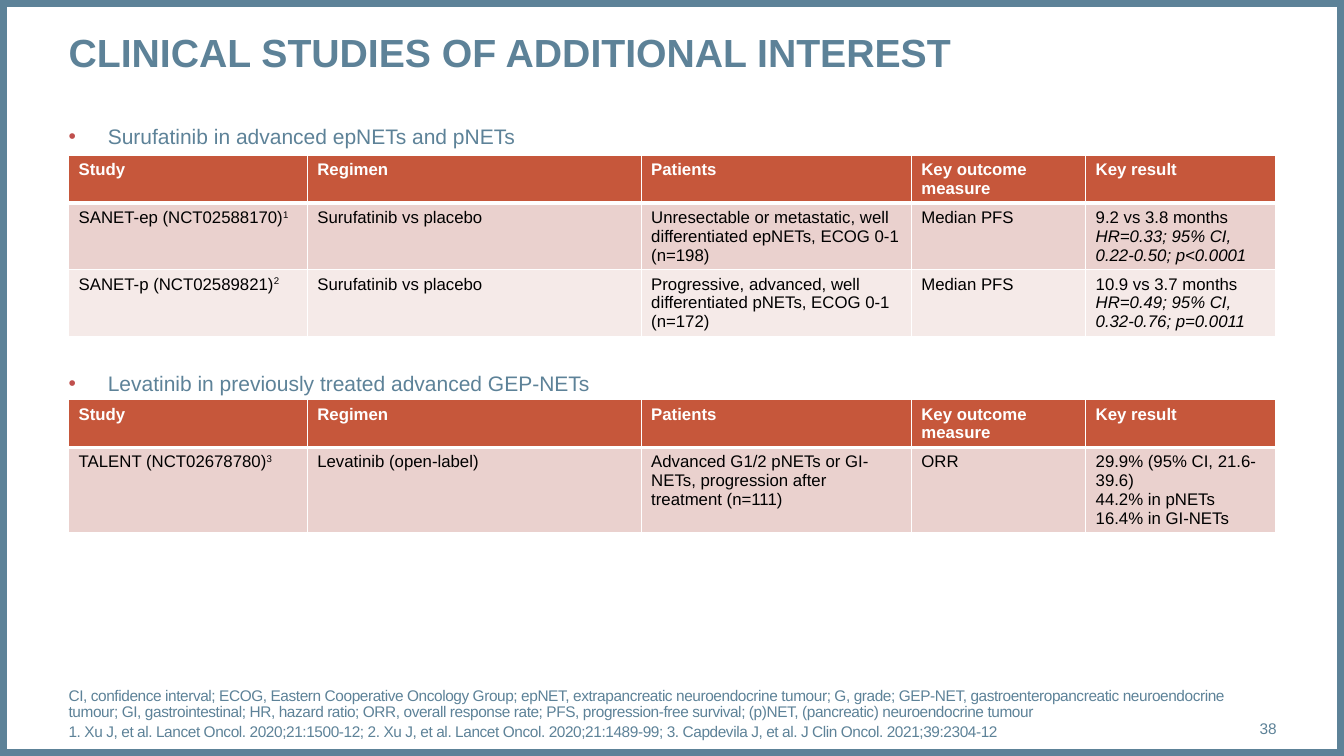
import pptx
import pptx.util
import pptx.dml.color
import pptx.enum.shapes
import pptx.enum.text
import pptx.oxml.ns
from lxml import etree

Pt = pptx.util.Pt
RGB = pptx.dml.color.RGBColor.from_string
ALIGN = pptx.enum.text.PP_ALIGN
ANCHOR = pptx.enum.text.MSO_ANCHOR
qn = pptx.oxml.ns.qn

THEME = {
    "font": "Arial", "slate": "5D8298", "bullet": "C0504D",
    "header": "C6573B", "bands": ["EAD1CE", "F5EAE8"],
    "white": "FFFFFF", "black": "000000",
    "title": 28, "heading": 15, "cell": 12, "small": 11,
}
LEFT, WIDTH = 49, 863


def place(shape, top, height, anchor, left=LEFT, width=WIDTH):
    """Position a text shape and strip its insets."""
    shape.left, shape.top, shape.width, shape.height = Pt(left), Pt(top), Pt(width), Pt(height)
    frame = shape.text_frame
    frame.margin_left = frame.margin_right = frame.margin_top = frame.margin_bottom = 0
    frame.word_wrap = True
    frame.auto_size = pptx.enum.text.MSO_AUTO_SIZE.NONE
    frame.vertical_anchor = anchor
    return frame


def style(para, size, color, bold=False):
    """Give every run of a paragraph the same look."""
    for span in para.runs:
        span.font.name = THEME["font"]
        span.font.size = Pt(size)
        span.font.color.rgb = RGB(color)
        span.font.bold = bold


deck = pptx.Presentation()
deck.slide_width, deck.slide_height = Pt(960), Pt(540)
page = deck.slides.add_slide(deck.slide_layouts[3])
title, *headings = page.placeholders

# Page border
border = page.shapes.add_shape(pptx.enum.shapes.MSO_SHAPE.RECTANGLE, 0, 0, Pt(960), Pt(540))
border.shadow.inherit = False
border.fill.background()
border.line.color.rgb = RGB(THEME["slate"])
border.line.width = Pt(10)
page.shapes._spTree.insert(2, border._element)

# Title
frame = place(title, 20, 68, ANCHOR.TOP)
frame.text = "CLINICAL STUDIES OF ADDITIONAL INTEREST"
frame.paragraphs[0].alignment = ALIGN.LEFT
style(frame.paragraphs[0], THEME["title"], THEME["slate"], bold=True)

# Table content: a cell is a list of paragraphs, a paragraph a list of (text, look) runs
COLUMNS = {"Study": 170.5, "Regimen": 238.5, "Patients": 193,
           "Key outcome measure": 124.5, "Key result": 136}
SECTIONS = [
    ("Surufatinib in advanced epNETs and pNETs", 88.5, 111, [34, 47.5, 47.5], [
        [[[("SANET-ep (NCT02588170)", ""), ("1", "super")]],
         [[("Surufatinib vs placebo", "")]],
         [[("Unresectable or metastatic, well differentiated epNETs, ECOG 0-1 (n=198)", "")]],
         [[("Median PFS", "")]],
         [[("9.2 vs 3.8 months ", ""), ("HR=0.33; 95% CI, 0.22-0.50; p<0.0001", "italic")]]],
        [[[("SANET-p (NCT02589821)", ""), ("2", "super")]],
         [[("Surufatinib vs placebo", "")]],
         [[("Progressive, advanced, well differentiated pNETs, ECOG 0-1 (n=172)", "")]],
         [[("Median PFS", "")]],
         [[("10.9 vs 3.7 months ", ""), ("HR=0.49; 95% CI, 0.32-0.76; p=0.0011", "italic")]]],
    ]),
    ("Levatinib in previously treated advanced GEP-NETs", 264.5, 285.5, [33, 61], [
        [[[("TALENT (NCT02678780)", ""), ("3", "super")]],
         [[("Levatinib (open-label)", "")]],
         [[("Advanced G1/2 pNETs or GI-NETs, progression after treatment (n=111)", "")]],
         [[("ORR", "")]],
         [[("29.9% (95% CI, 21.6-39.6)", "")], [("44.2% in pNETs", "")],
          [("16.4% in GI-NETs", "")]]],
    ]),
]
header = [[[(name, "")]] for name in COLUMNS]

for box, (heading, heading_top, table_top, heights, studies) in zip(headings, SECTIONS):
    # Bulleted heading
    frame = place(box, heading_top, 15, ANCHOR.TOP)
    frame.text = heading
    para = frame.paragraphs[0]
    para.space_before = Pt(0)
    props = para._p.get_or_add_pPr()
    props.set("marL", str(Pt(28)))
    props.set("indent", str(-Pt(28)))
    bullet_color = etree.SubElement(props, qn("a:buClr"))
    etree.SubElement(bullet_color, qn("a:srgbClr"), val=THEME["bullet"])
    etree.SubElement(props, qn("a:buFont"), typeface=THEME["font"])
    etree.SubElement(props, qn("a:buChar"), char="•")
    style(para, THEME["heading"], THEME["slate"])

    # Study table
    rows = [header] + studies
    table = page.shapes.add_table(len(rows), len(COLUMNS), Pt(LEFT), Pt(table_top),
                                  Pt(WIDTH), Pt(sum(heights))).table
    table.horz_banding = False
    for column, width in zip(table.columns, COLUMNS.values()):
        column.width = Pt(width)
    for i, (row, height) in enumerate(zip(rows, heights)):
        table.rows[i].height = Pt(height)
        for j, content in enumerate(row):
            cell = table.cell(i, j)
            cell.fill.solid()
            cell.fill.fore_color.rgb = RGB(THEME["bands"][i - 1] if i else THEME["header"])

            # White rules, thicker under the header
            for k, side in enumerate(["lnL", "lnR", "lnT", "lnB"]):
                thick = (i, side) in [(0, "lnB"), (1, "lnT")]
                rule = etree.Element(qn("a:" + side), w=str(Pt(3 if thick else 1)))
                fill = etree.SubElement(rule, qn("a:solidFill"))
                etree.SubElement(fill, qn("a:srgbClr"), val=THEME["white"])
                cell._tc.get_or_add_tcPr().insert(k, rule)

            # Cell text
            for n, spans in enumerate(content):
                para = cell.text_frame.add_paragraph() if n else cell.text_frame.paragraphs[0]
                for text, look in spans:
                    span = para.add_run()
                    span.text = text
                    span.font.italic = look == "italic"
                    if look == "super":
                        span.font._element.set("baseline", "30000")
                style(para, THEME["cell"], THEME["black" if i else "white"], bold=i == 0)

# Abbreviations and references
notes = page.shapes.add_textbox(0, 0, 0, 0)
frame = place(notes, 489, 40, ANCHOR.BOTTOM)
frame.text = (
    "CI, confidence interval; ECOG, Eastern Cooperative Oncology Group; epNET, extrapancreatic "
    "neuroendocrine tumour; G, grade; GEP-NET, gastroenteropancreatic neuroendocrine tumour; "
    "GI, gastrointestinal; HR, hazard ratio; ORR, overall response rate; PFS, progression-free "
    "survival; (p)NET, (pancreatic) neuroendocrine tumour\n"
    "1. Xu J, et al. Lancet Oncol. 2020;21:1500-12; 2. Xu J, et al. Lancet Oncol. "
    "2020;21:1489-99; 3. Capdevila J, et al. J Clin Oncol. 2021;39:2304-12")
for para in frame.paragraphs:
    para.line_spacing = 0.9
    para.space_after = Pt(2)
    style(para, THEME["small"], THEME["slate"])
    para.runs[0].font._element.set("spc", "-30")

# Page number
number = page.shapes.add_textbox(0, 0, 0, 0)
frame = place(number, 506, 29, ANCHOR.MIDDLE, left=850, width=62)
frame.text = "38"
frame.paragraphs[0].alignment = ALIGN.RIGHT
style(frame.paragraphs[0], THEME["small"], THEME["slate"])

deck.save("out.pptx")
